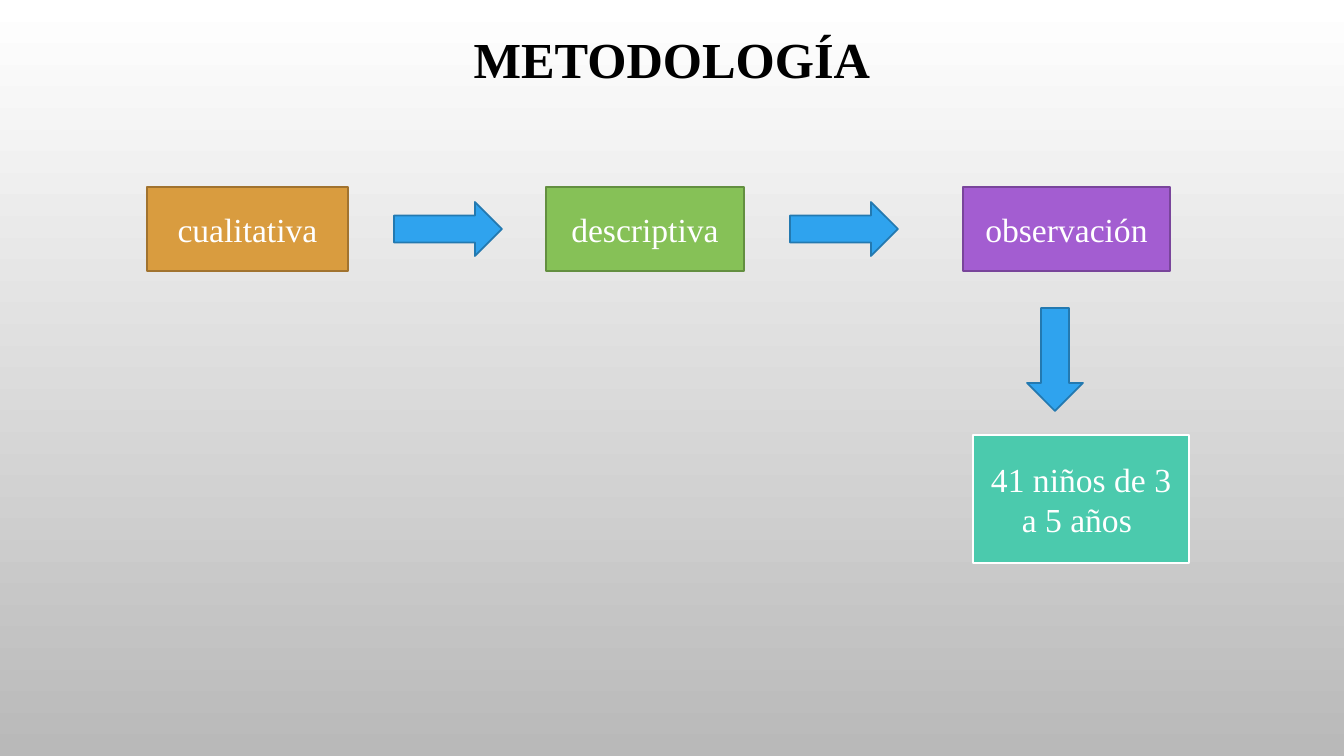
from pptx import Presentation
from pptx import util as u
from pptx.dml.color import RGBColor
from pptx.enum import shapes, text

PX = 914400 / 100.8
FONT = "Times New Roman"

BLACK = RGBColor(0x00, 0x00, 0x00)
WHITE = RGBColor(0xFF, 0xFF, 0xFF)
GREY = RGBColor(0xB9, 0xB9, 0xB9)
ORANGE = RGBColor(0xD9, 0x9C, 0x3F)
DARK_ORANGE = RGBColor(0xA1, 0x73, 0x2F)
GREEN = RGBColor(0x86, 0xC1, 0x57)
DARK_GREEN = RGBColor(0x63, 0x8F, 0x40)
PURPLE = RGBColor(0xA3, 0x5D, 0xD1)
DARK_PURPLE = RGBColor(0x79, 0x45, 0x9B)
TEAL = RGBColor(0x4B, 0xCA, 0xAD)
BLUE = RGBColor(0x2F, 0xA3, 0xEE)
DARK_BLUE = RGBColor(0x23, 0x79, 0xB0)

ROW_TOP, ROW_HEIGHT = 187, 84
ARROW_TOP, ARROW_HEIGHT = 202, 54


def px(*lengths):
    return [u.Emu(round(length * PX)) for length in lengths]


def write(frame, wording, size, color, bold=False):
    """Put one centred paragraph in the middle of a frame."""
    frame.text = wording
    frame.word_wrap = True
    frame.vertical_anchor = text.MSO_ANCHOR.MIDDLE
    para = frame.paragraphs[0]
    para.alignment = text.PP_ALIGN.CENTER
    font = para.runs[0].font
    font.name, font.size, font.bold = FONT, u.Pt(size), bold
    font.color.rgb = color
    return para


def paint_background(page):
    """Shade the page from white at the top to grey at the bottom."""
    fill = page.background.fill
    fill.gradient()
    fill.gradient_angle = 270
    for stop, color, position in zip(fill.gradient_stops, (WHITE, GREY), (0, 1)):
        stop.color.rgb = color
        stop.position = position


def add_title(page, wording, *place):
    title = page.shapes.title
    title.left, title.top, title.width, title.height = px(*place)
    para = write(title.text_frame, wording, 36, BLACK, bold=True)
    para.line_spacing = 0.9


def add_figure(page, kind, place, fill, line, line_width=1.25):
    figure = page.shapes.add_shape(kind, *px(*place))
    figure.shadow.inherit = False
    figure.fill.solid()
    figure.fill.fore_color.rgb = fill
    figure.line.color.rgb = line
    figure.line.width = u.Pt(line_width)
    return figure


def add_box(page, wording, place, fill, line, line_width=1.25):
    box = add_figure(page, shapes.MSO_SHAPE.RECTANGLE, place, fill, line, line_width)
    write(box.text_frame, wording, 24, WHITE)


def add_arrow(page, kind, *place):
    add_figure(page, kind, place, BLUE, DARK_BLUE)


def main():
    deck = Presentation()
    deck.slide_width, deck.slide_height = px(1344, 756)
    page = deck.slides.add_slide(deck.slide_layouts[5])
    paint_background(page)
    add_title(page, "METODOLOGÍA", 101, 26, 1142, 73)

    steps = [
        ("cualitativa", 147, 201, ORANGE, DARK_ORANGE),
        ("descriptiva", 546, 198, GREEN, DARK_GREEN),
        ("observación", 963, 207, PURPLE, DARK_PURPLE),
    ]
    for wording, left, width, fill, line in steps:
        add_box(page, wording, (left, ROW_TOP, width, ROW_HEIGHT), fill, line)
    add_box(page, "41 niños de 3 a 5 años ", (973, 435, 216, 128), TEAL, WHITE, 1.75)

    for left in (394, 790):
        add_arrow(page, shapes.MSO_SHAPE.RIGHT_ARROW, left, ARROW_TOP, 108, ARROW_HEIGHT)
    add_arrow(page, shapes.MSO_SHAPE.DOWN_ARROW, 1027, 308, 56, 103)

    deck.save("out.pptx")


if __name__ == "__main__":
    main()
